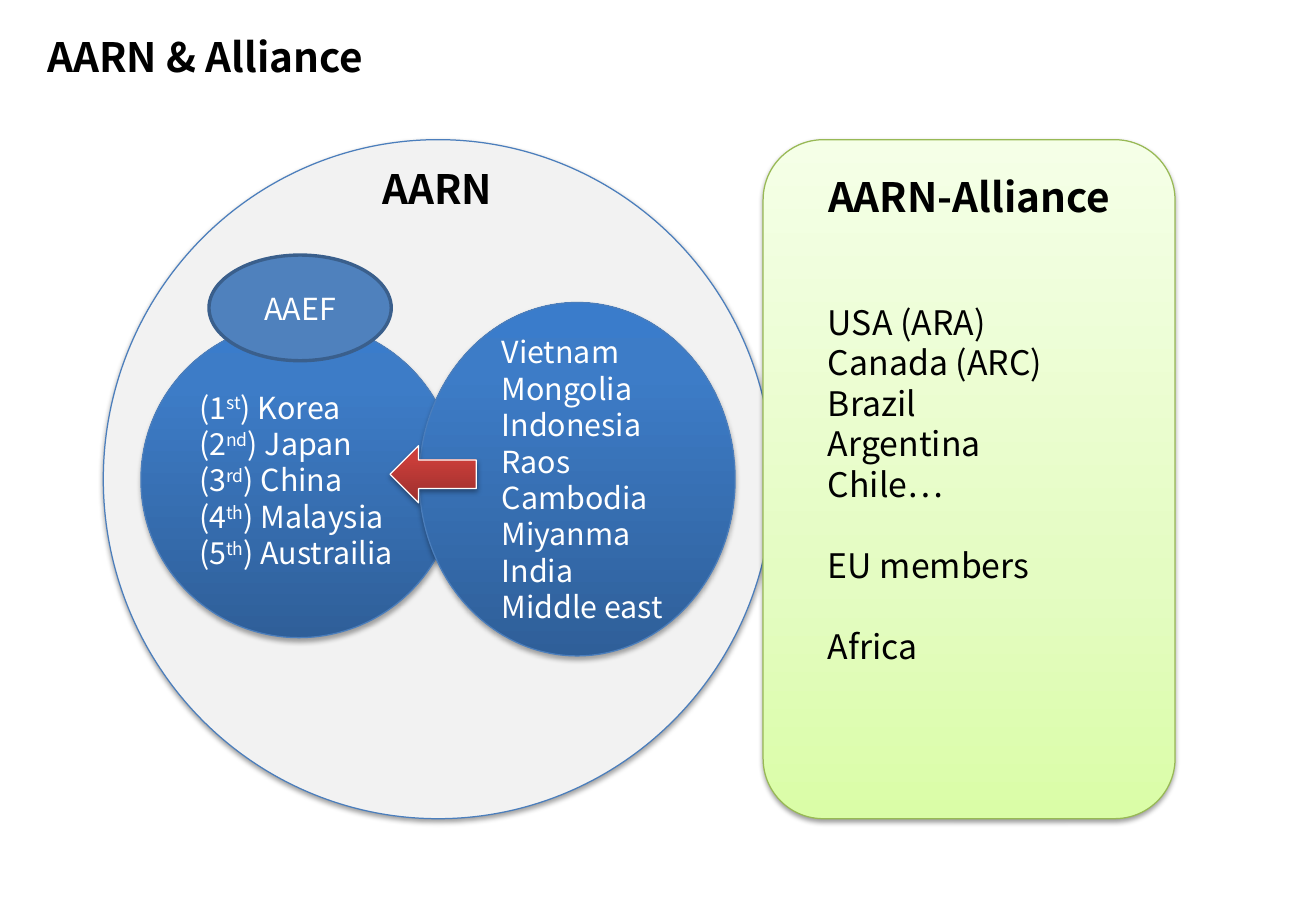
from lxml import etree
from pptx import Presentation
from pptx.dml.color import RGBColor as Rgb
from pptx.enum.shapes import MSO_SHAPE as Kind
from pptx.enum.text import MSO_ANCHOR as Anchor, PP_ALIGN as Align
from pptx.oxml.ns import qn
from pptx.util import Inches, Pt

FONT = "Noto Sans CJK KR"
HEX = {
    "black": "000000", "white": "FFFFFF", "gray": "F2F2F2",
    "blue": "4F81BD", "navy": "3A5F8C", "edge": "4B7EBC", "green": "98B955",
}
FADES = {
    "blue": [(0, "2F5F99"), (80, "3D7CC7"), (100, "3A7CCB")],
    "green": [(0, "DAFDA7"), (35, "E4FCC2"), (100, "F5FFE7")],
    "red": [(0, "9C2F2D"), (80, "CB3E3A"), (100, "CE3B37")],
}
RANKED = [("1", "st", "Korea"), ("2", "nd", "Japan"), ("3", "rd", "China"),
          ("4", "th", "Malaysia"), ("5", "th", "Austrailia")]
JOINING = ["Vietnam", "Mongolia", "Indonesia", "Raos",
           "Cambodia", "Miyanma", "India", "Middle east"]
ALLIES = [("USA (ARA)", 48), ("Canada (ARC)", 0), ("Brazil", 0),
          ("Argentina", 0), ("Chile…", 0), ("EU members", 24), ("Africa", 24)]


def node(parent, tag, **attrs):
    return etree.SubElement(parent, qn(tag), {k: str(v) for k, v in attrs.items()})


def fade(shape, stops):
    shape.fill.gradient()
    shape.fill.gradient_angle = 90
    group = shape._element.spPr.find(".//" + qn("a:gsLst"))
    for old in list(group):
        group.remove(old)
    for place, tone in stops:
        node(node(group, "a:gs", pos=place * 1000), "a:srgbClr", val=tone)


def shade(shape, alpha, drop):
    effects = shape._element.spPr.find(qn("a:effectLst"))
    outer = node(effects, "a:outerShdw", blurRad=Pt(3.1), dist=Pt(drop),
                 dir=90 * 60000, rotWithShape=0)
    tone = node(outer, "a:srgbClr", val=HEX["black"])
    node(tone, "a:alpha", val=alpha * 1000)


def draw(slide, kind, box, edge, fill=None, stops=None, width=0.75, shadow=None):
    shape = slide.shapes.add_shape(kind, *map(Inches, box))
    shape.shadow.inherit = False
    if stops:
        fade(shape, stops)
    else:
        shape.fill.solid()
        shape.fill.fore_color.rgb = Rgb.from_string(HEX[fill])
    shape.line.color.rgb = Rgb.from_string(HEX[edge])
    shape.line.width = Pt(width)
    if shadow:
        shade(shape, *shadow)
    shape.text_frame.word_wrap = True
    shape.text_frame.vertical_anchor = Anchor.MIDDLE
    return shape


def line(frame, size, align=Align.LEFT, indent=0, before=0):
    first = frame.paragraphs[0]
    para = frame.add_paragraph() if first.runs else first
    para.alignment = align
    para.line_spacing = Pt(size * 1.2)
    para.space_before = Pt(before)
    if indent:
        para._p.get_or_add_pPr().set("marL", str(Inches(indent)))
    return para


def write(para, text, size, tone="white", bold=False, raised=False):
    run = para.add_run()
    run.text = text
    font = run.font
    font.name, font.size, font.bold = FONT, Pt(size), bold
    font.color.rgb = Rgb.from_string(HEX[tone])
    if raised:
        run._r.get_or_add_rPr().set("baseline", "30000")


def head(slide):
    title = slide.shapes.title
    title.left, title.top, title.width, title.height = map(Inches, (0.29, 0.21, 2.95, 0.5))
    frame = title.text_frame
    frame.word_wrap = False
    frame.vertical_anchor = Anchor.MIDDLE
    write(line(frame, 24), "AARN & Alliance", 24, "black", True)


def label(slide, text, box):
    frame = slide.shapes.add_textbox(*map(Inches, box)).text_frame
    frame.word_wrap = True
    frame.vertical_anchor = Anchor.MIDDLE
    write(line(frame, 24, Align.CENTER), text, 24, "black", True)


def network(slide):
    draw(slide, Kind.OVAL, (0.85, 1.15, 5.51, 5.59), "edge", "gray", shadow=(38, 1.6))
    label(slide, "AARN", (2.6, 1.3, 2, 0.5))
    ranked = draw(slide, Kind.OVAL, (1.16, 2.65, 2.6, 2.6), "edge",
                  stops=FADES["blue"], shadow=(35, 1.8))
    for number, suffix, land in RANKED:
        para = line(ranked.text_frame, 18)
        write(para, "(" + number, 18)
        write(para, suffix, 18, raised=True)
        write(para, ") " + land, 18)
    joining = draw(slide, Kind.OVAL, (3.45, 2.49, 2.6, 2.91), "edge",
                   stops=FADES["blue"], shadow=(35, 1.8))
    for land in JOINING:
        write(line(joining.text_frame, 18, indent=0.2), land, 18)
    forum = draw(slide, Kind.OVAL, (1.72, 2.1, 1.5, 0.87), "navy", "blue", width=2)
    write(line(forum.text_frame, 18, Align.CENTER), "AAEF", 18)


def alliance(slide):
    panel = draw(slide, Kind.ROUNDED_RECTANGLE, (6.28, 1.15, 3.39, 5.59), "green",
                 stops=FADES["green"], shadow=(38, 1.6))
    panel.adjustments[0] = 0.146
    frame = panel.text_frame
    frame.vertical_anchor = Anchor.TOP
    frame.margin_top = Inches(0.12)
    write(line(frame, 24, Align.CENTER), "AARN-Alliance", 24, "black", True)
    for ally, before in ALLIES:
        write(line(frame, 20, indent=0.29, before=before), ally, 20, "black")


def main():
    deck = Presentation()
    deck.slide_width, deck.slide_height = Inches(10.83), Inches(7.5)
    slide = deck.slides.add_slide(deck.slide_layouts[5])
    head(slide)
    network(slide)
    alliance(slide)
    draw(slide, Kind.LEFT_ARROW, (3.21, 3.67, 0.71, 0.47), "white",
         stops=FADES["red"], shadow=(35, 1.8))
    deck.save("out.pptx")


if __name__ == "__main__":
    main()
